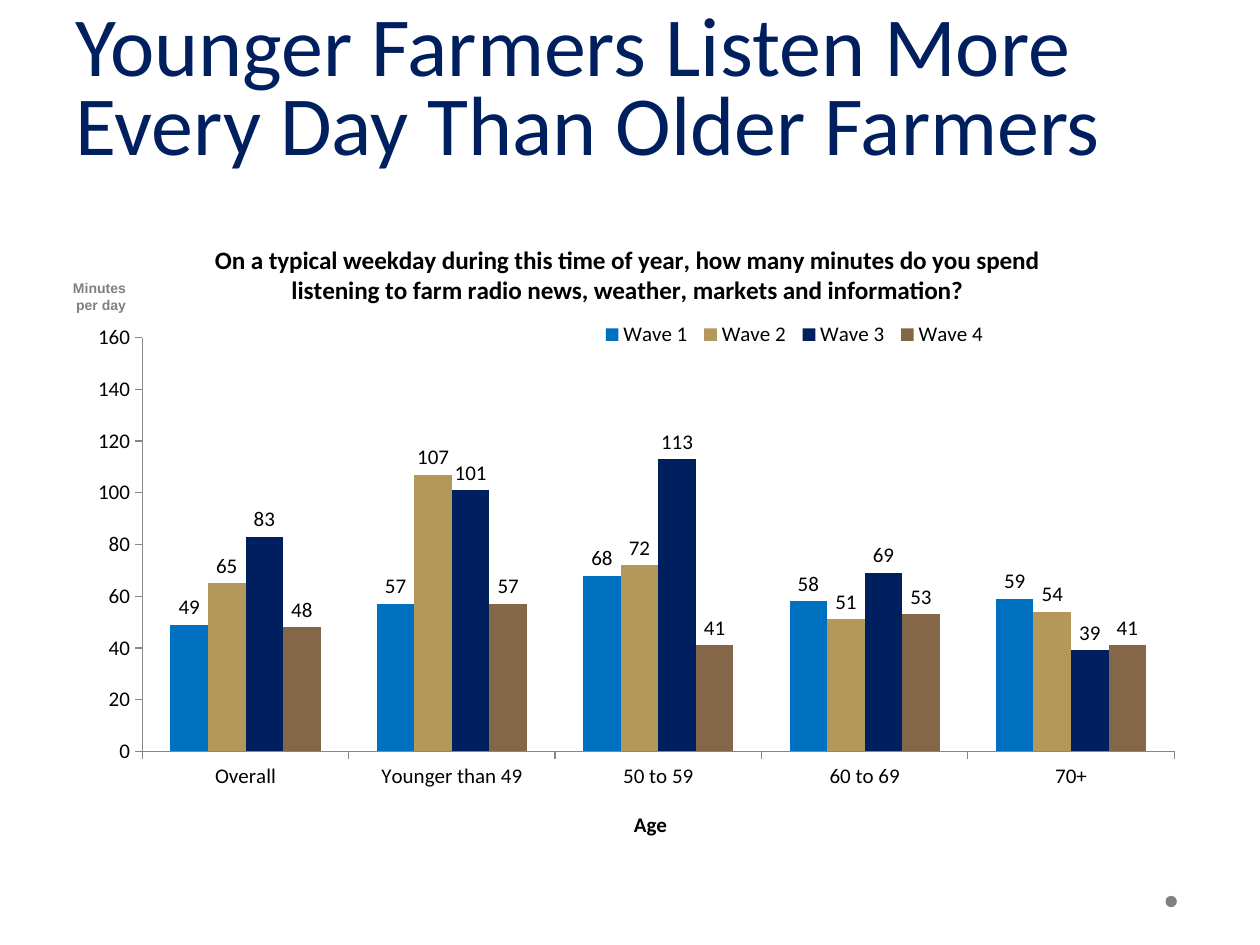
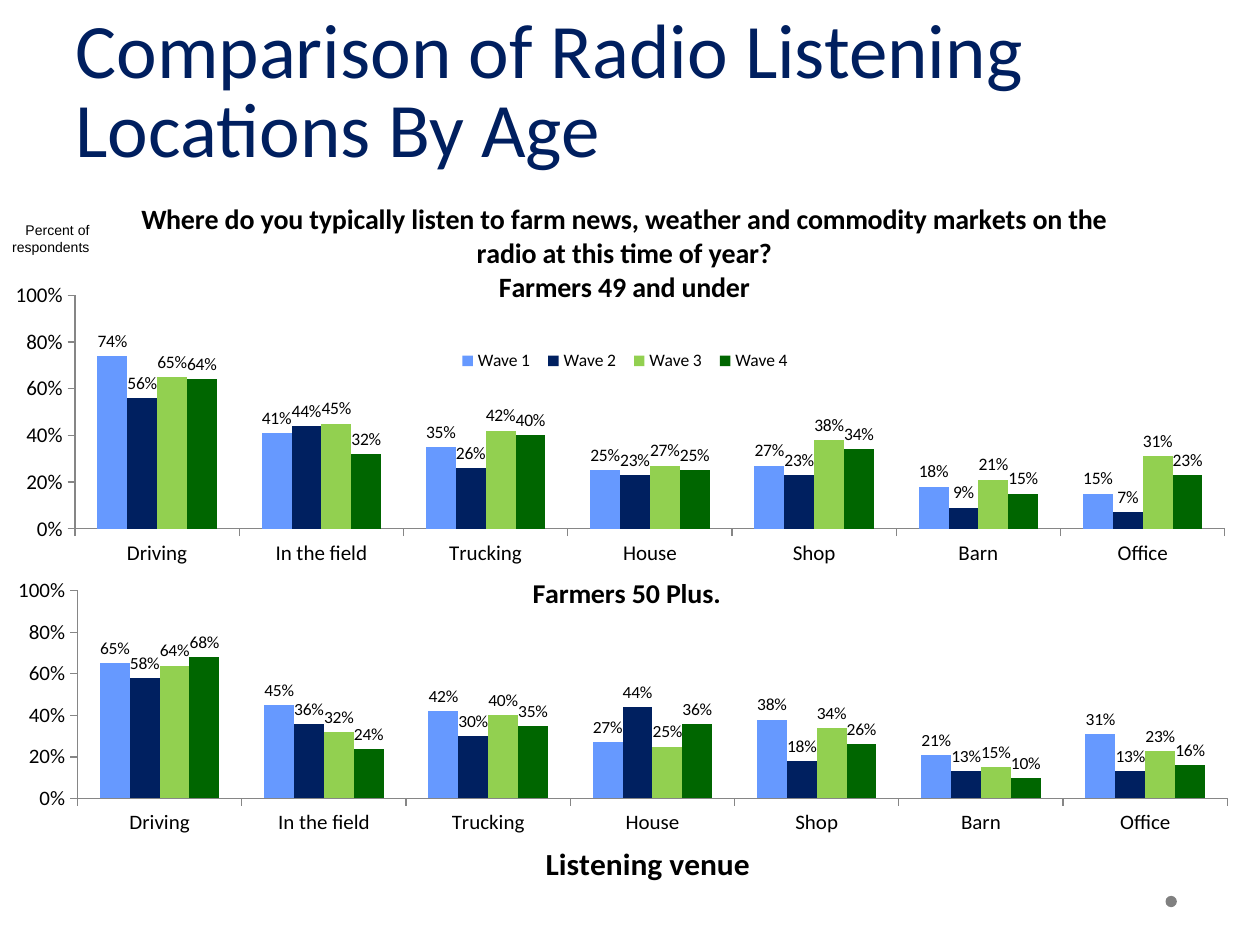
from lxml.etree import SubElement
from pptx import Presentation
from pptx.chart.data import CategoryChartData
from pptx.dml.color import RGBColor
from pptx.enum.chart import XL_CHART_TYPE, XL_LABEL_POSITION, XL_LEGEND_POSITION, XL_TICK_MARK
from pptx.enum.shapes import MSO_SHAPE
from pptx.enum.text import MSO_ANCHOR, MSO_AUTO_SIZE, PP_ALIGN
from pptx.oxml.ns import qn
from pptx.util import Inches, Pt

NAVY = "001F5F"
GRAY = "808080"
BLACK = "000000"
AXIS_GRAY = "868686"
MINUTE_COLORS = ["0070C0", "B4975A", NAVY, "846648"]
VENUE_COLORS = ["6699FF", "002060", "92D050", "006600"]
WAVES = ["Wave 1", "Wave 2", "Wave 3", "Wave 4"]
VENUES = ["Driving", "In the field", "Trucking", "House", "Shop", "Barn", "Office"]


def style_font(font, size, color=BLACK, bold=False, name="Calibri"):
    font.name = name
    font.size = Pt(size)
    font.bold = bold
    font.color.rgb = RGBColor.from_string(color)


def place_chart_part(chart, query, index, fractions):
    for part in chart.element.xpath(query):
        for old_layout in part.findall(qn("c:layout")):
            part.remove(old_layout)
        layout = SubElement(part, qn("c:layout"))
        part.insert(index, layout)
        manual = SubElement(layout, qn("c:manualLayout"))
        settings = [("xMode", "edge"), ("yMode", "edge"), *zip("xywh", fractions)]
        if query == ".//c:plotArea":
            settings.insert(0, ("layoutTarget", "inner"))
        for tag, value in settings:
            SubElement(manual, qn(f"c:{tag}")).set("val", str(value))


slides = [
    {
        "title": "Younger Farmers Listen More Every Day Than Older Farmers",
        "title_size": 48,
        "unit": ["Minutes", "per day"],
        "unit_box": (0.47, 2.17, 0.63, 0.37),
        "unit_color": GRAY,
        "unit_bold": True,
        "charts": [
            {
                "box": (0.5, 1.75, 9, 4.95),
                "title": "On a typical weekday during this time of year, how many minutes do you spend "
                         "listening to farm radio news, weather, markets and information?",
                "title_size": 14.4,
                "title_place": (0.13, 0.03),
                "plot_place": (0.07, 0.19, 0.91, 0.67),
                "legend_place": (0.47, 0.16, 0.35, 0.05),
                "axis_title": "Age",
                "axis_title_size": 12,
                "axis_title_place": (0.5, 0.95),
                "categories": ["Overall", "Younger than 49", "50 to 59", "60 to 69", "70+"],
                "names": WAVES,
                "values": [[49, 57, 68, 58, 59], [65, 107, 72, 51, 54],
                           [83, 101, 113, 69, 39], [48, 57, 41, 53, 41]],
                "colors": MINUTE_COLORS,
                "format": "0",
                "maximum": 160,
                "unit_step": 20,
                "label_size": 12,
            },
        ],
    },
    {
        "title": "Comparison of Radio Listening Locations By Age",
        "title_size": 44,
        "unit": ["Percent of", "respondents"],
        "unit_box": (0, 1.71, 0.81, 0.37),
        "unit_color": BLACK,
        "unit_bold": False,
        "charts": [
            {
                "box": (0, 1.5, 9.92, 3.25),
                "title": "Where do you typically listen to farm news, weather and commodity markets on the "
                         "radio at this time of year?\nFarmers 49 and under",
                "title_size": 16,
                "title_place": (0.11, 0.02),
                "plot_place": (0.06, 0.26, 0.92, 0.57),
                "legend_place": (0.36, 0.39, 0.28, 0.06),
                "categories": VENUES,
                "names": WAVES,
                "values": [[0.74, 0.41, 0.35, 0.25, 0.27, 0.18, 0.15],
                           [0.56, 0.44, 0.26, 0.23, 0.23, 0.09, 0.07],
                           [0.65, 0.45, 0.42, 0.27, 0.38, 0.21, 0.31],
                           [0.64, 0.32, 0.4, 0.25, 0.34, 0.15, 0.23]],
                "colors": VENUE_COLORS,
                "format": "0%",
                "maximum": 1,
                "unit_step": 0.2,
                "label_size": 10,
            },
            {
                "box": (0.02, 4.25, 9.92, 2.83),
                "title": "Farmers 50 Plus.",
                "title_size": 16,
                "title_place": (0.42, 0.1),
                "plot_place": (0.06, 0.16, 0.92, 0.6),
                "axis_title": "Listening venue",
                "axis_title_size": 18,
                "axis_title_place": (0.43, 0.87),
                "categories": VENUES,
                "names": ["Series 1", "Series 2", "Series 3", "Series 4"],
                "values": [[0.65, 0.45, 0.42, 0.27, 0.38, 0.21, 0.31],
                           [0.58, 0.36, 0.3, 0.44, 0.18, 0.13, 0.13],
                           [0.64, 0.32, 0.4, 0.25, 0.34, 0.15, 0.23],
                           [0.68, 0.24, 0.35, 0.36, 0.26, 0.1, 0.16]],
                "colors": VENUE_COLORS,
                "format": "0%",
                "maximum": 1,
                "unit_step": 0.2,
                "label_size": 10,
            },
        ],
    },
]

presentation = Presentation()
presentation.slide_width = Inches(10)
presentation.slide_height = Inches(7.5)

for content in slides:
    slide = presentation.slides.add_slide(presentation.slide_layouts[5])

    title = slide.shapes.title
    title.left, title.top, title.width, title.height = map(Inches, (0.5, 0, 9, 1.42))
    title.text_frame.text = content["title"]
    title.text_frame.auto_size = MSO_AUTO_SIZE.NONE
    title.text_frame.vertical_anchor = MSO_ANCHOR.BOTTOM
    title_paragraph = title.text_frame.paragraphs[0]
    title_paragraph.alignment = PP_ALIGN.LEFT
    title_paragraph.line_spacing = Pt(45)
    style_font(title_paragraph.runs[0].font, content["title_size"], NAVY)

    footer_dot = slide.shapes.add_shape(MSO_SHAPE.OVAL, *map(Inches, (9.25, 7.11, 0.09, 0.09)))
    footer_dot.shadow.inherit = False
    footer_dot.fill.solid()
    footer_dot.fill.fore_color.rgb = RGBColor.from_string(GRAY)
    footer_dot.line.fill.background()

    for details in content["charts"]:
        chart_data = CategoryChartData(number_format=details["format"])
        chart_data.categories = details["categories"]
        for name, values in zip(details["names"], details["values"]):
            chart_data.add_series(name, values)
        chart = slide.shapes.add_chart(
            XL_CHART_TYPE.COLUMN_CLUSTERED, *map(Inches, details["box"]), chart_data).chart
        style_font(chart.font, 12)

        chart.has_title = True
        chart.chart_title.include_in_layout = False
        headings = [(chart.chart_title, details["title"], details["title_size"])]
        if "axis_title" in details:
            headings.append((chart.category_axis.axis_title, details["axis_title"], details["axis_title_size"]))
        for heading, text, size in headings:
            heading.text_frame.text = text
            for paragraph in heading.text_frame.paragraphs:
                style_font(paragraph.font, size, bold=True)
                style_font(paragraph.runs[0].font, size, bold=True)
        place_chart_part(chart, "./c:chart/c:title", 1, details["title_place"])
        place_chart_part(chart, ".//c:plotArea", 0, details["plot_place"])
        if "axis_title" in details:
            place_chart_part(chart, ".//c:catAx/c:title", 1, details["axis_title_place"])

        chart.has_legend = "legend_place" in details
        if chart.has_legend:
            chart.legend.position = XL_LEGEND_POSITION.TOP
            chart.legend.include_in_layout = False
            style_font(chart.legend.font, details["label_size"])
            place_chart_part(chart, ".//c:legend", 1, details["legend_place"])

        for axis in (chart.category_axis, chart.value_axis):
            axis.has_major_gridlines = False
            axis.major_tick_mark = XL_TICK_MARK.OUTSIDE
            axis.minor_tick_mark = XL_TICK_MARK.NONE
            axis.format.line.color.rgb = RGBColor.from_string(AXIS_GRAY)
            axis.format.line.width = Pt(0.75)
            style_font(axis.tick_labels.font, 12)
        value_axis = chart.value_axis
        value_axis.minimum_scale = 0
        value_axis.maximum_scale = details["maximum"]
        value_axis.major_unit = details["unit_step"]
        value_axis.tick_labels.number_format = details["format"]
        value_axis.tick_labels.number_format_is_linked = False

        plot = chart.plots[0]
        plot.gap_width = 150
        plot.overlap = 0
        plot.vary_by_categories = False
        for series, color in zip(plot.series, details["colors"]):
            series.format.fill.solid()
            series.format.fill.fore_color.rgb = RGBColor.from_string(color)
            series.invert_if_negative = False
            labels = series.data_labels
            labels.show_value = True
            labels.position = XL_LABEL_POSITION.OUTSIDE_END
            labels.number_format = details["format"]
            labels.number_format_is_linked = False
            style_font(labels.font, details["label_size"])

    unit_label = slide.shapes.add_textbox(*map(Inches, content["unit_box"]))
    unit_label.text_frame.text = "\n".join(content["unit"])
    unit_label.text_frame.margin_left = 0
    unit_label.text_frame.word_wrap = False
    unit_label.text_frame.auto_size = MSO_AUTO_SIZE.NONE
    for paragraph in unit_label.text_frame.paragraphs:
        paragraph.alignment = PP_ALIGN.RIGHT
        style_font(paragraph.runs[0].font, 8, content["unit_color"], content["unit_bold"], "Arial")

presentation.save("out.pptx")
